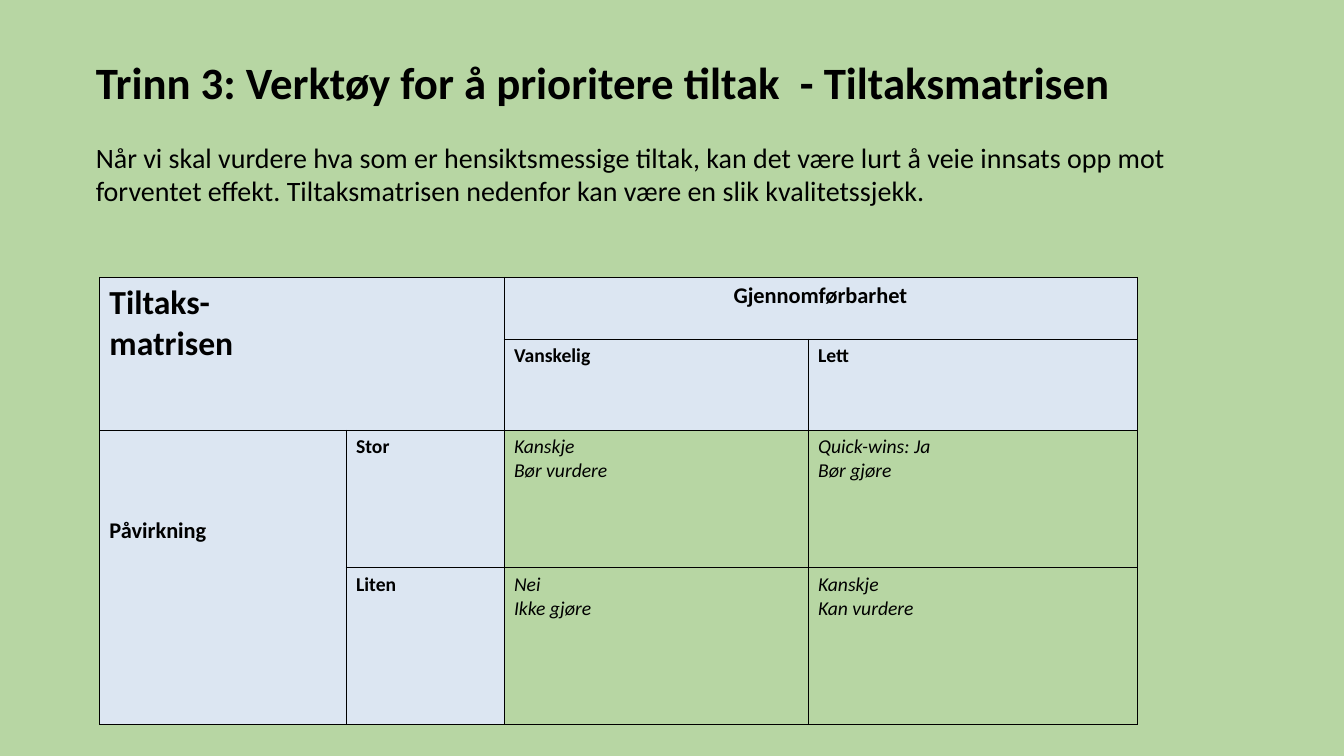
from lxml.etree import SubElement
from pptx import Presentation
from pptx.dml.color import RGBColor
from pptx.enum.text import MSO_ANCHOR as Anchor, MSO_AUTO_SIZE as AutoSize, PP_ALIGN as Align
from pptx.oxml.ns import qn
from pptx.util import Pt

COLORS = {"background": "B7D6A3", "header": "DCE6F2", "ink": "000000"}


def write(text_frame, text, size, bold=False, italic=False, align=Align.LEFT):
    for index, line in enumerate(text.split("\n")):
        paragraph = text_frame.paragraphs[0] if index == 0 else text_frame.add_paragraph()
        paragraph.text = line
        paragraph.alignment = align
        paragraph.space_before = Pt(0)
        paragraph.line_spacing = 1.0
        font = paragraph.runs[0].font
        font.name = "Calibri"
        font.size = Pt(size)
        font.bold = bold
        font.italic = italic
        font.color.rgb = RGBColor.from_string(COLORS["ink"])


presentation = Presentation()
presentation.slide_width, presentation.slide_height = Pt(960), Pt(540)
slide = presentation.slides.add_slide(presentation.slide_layouts[1])
slide.background.fill.solid()
slide.background.fill.fore_color.rgb = RGBColor.from_string(COLORS["background"])

# Title and introduction
title, intro = slide.shapes.title, slide.placeholders[1]
for shape, top, height in ((title, 35.3, 46), (intro, 96.5, 55.5)):
    shape.left, shape.top, shape.width, shape.height = Pt(61.2), Pt(top), Pt(857.5), Pt(height)
    shape.text_frame.word_wrap = True
    shape.text_frame.auto_size = AutoSize.SHAPE_TO_FIT_TEXT
    shape.text_frame.vertical_anchor = Anchor.TOP
write(title.text_frame, "Trinn 3: Verktøy for å prioritere tiltak  - Tiltaksmatrisen", 32, bold=True)

intro.text_frame.margin_right = Pt(40)
intro_properties = intro.text_frame.paragraphs[0]._p.get_or_add_pPr()
intro_properties.set("marL", "0")
intro_properties.set("indent", "0")
SubElement(intro_properties, qn("a:buNone"))
write(intro.text_frame,
      "Når vi skal vurdere hva som er hensiktsmessige tiltak, kan det være lurt å veie innsats opp mot "
      "forventet effekt. Tiltaksmatrisen nedenfor kan være en slik kvalitetssjekk.", 20)

# Matrix grid
column_widths = (176.2, 112.8, 217.2, 235)
row_heights = (44.3, 65, 98.2, 112)
matrix = slide.shapes.add_table(len(row_heights), len(column_widths), Pt(71), Pt(198),
                                Pt(sum(column_widths)), Pt(sum(row_heights))).table
matrix.first_row = matrix.horz_banding = False
for column, width in zip(matrix.columns, column_widths):
    column.width = Pt(width)
for row, height in zip(matrix.rows, row_heights):
    row.height = Pt(height)

# Borders and fills
for row_index, row in enumerate(matrix.rows):
    for column_index, cell in enumerate(row.cells):
        cell_properties = cell._tc.get_or_add_tcPr()
        for side in ("lnL", "lnR", "lnT", "lnB"):
            border = SubElement(cell_properties, qn(f"a:{side}"), w=str(Pt(0.6)))
            border_fill = SubElement(border, qn("a:solidFill"))
            SubElement(border_fill, qn("a:srgbClr"), val=COLORS["ink"])
        if row_index < 2 or column_index < 2:
            cell.fill.solid()
            cell.fill.fore_color.rgb = RGBColor.from_string(COLORS["header"])
        else:
            cell.fill.background()

# Merged headings
for first, last in (((0, 0), (1, 1)), ((0, 2), (0, 3)), ((2, 0), (3, 0))):
    matrix.cell(*first).merge(matrix.cell(*last))
matrix.cell(2, 0).margin_top = Pt(62)

# Matrix text
heading, label, answer = {"size": 16, "bold": True}, {"size": 14, "bold": True}, {"size": 14, "italic": True}
matrix_texts = (
    (0, 0, "Tiltaks-\nmatrisen", {"size": 24, "bold": True}),
    (0, 2, "Gjennomførbarhet", {**heading, "align": Align.CENTER}),
    (1, 2, "Vanskelig", label),
    (1, 3, "Lett", label),
    (2, 0, "Påvirkning", heading),
    (2, 1, "Stor", label),
    (2, 2, "Kanskje\nBør vurdere", answer),
    (2, 3, "Quick-wins: Ja\nBør gjøre", answer),
    (3, 1, "Liten", label),
    (3, 2, "Nei\nIkke gjøre", answer),
    (3, 3, "Kanskje\nKan vurdere", answer),
)
for row_index, column_index, text, text_format in matrix_texts:
    write(matrix.cell(row_index, column_index).text_frame, text, **text_format)

presentation.save("out.pptx")
